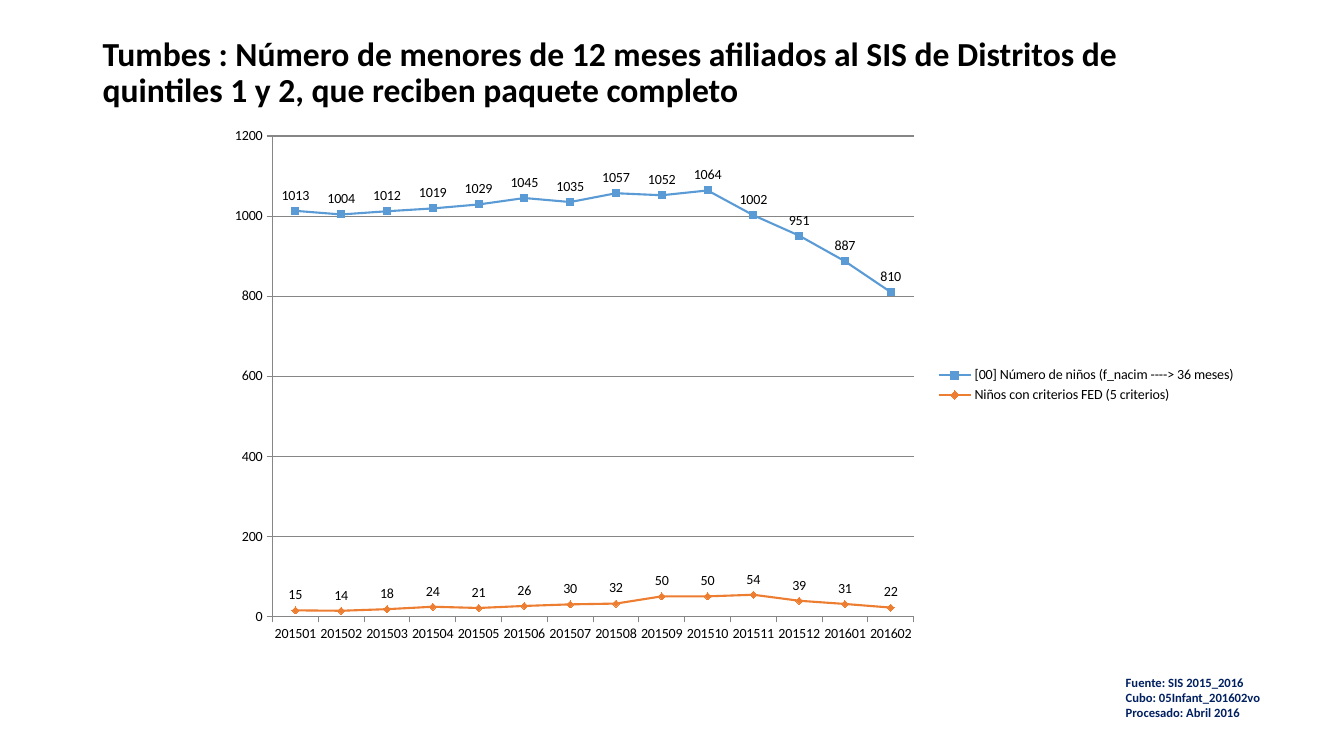
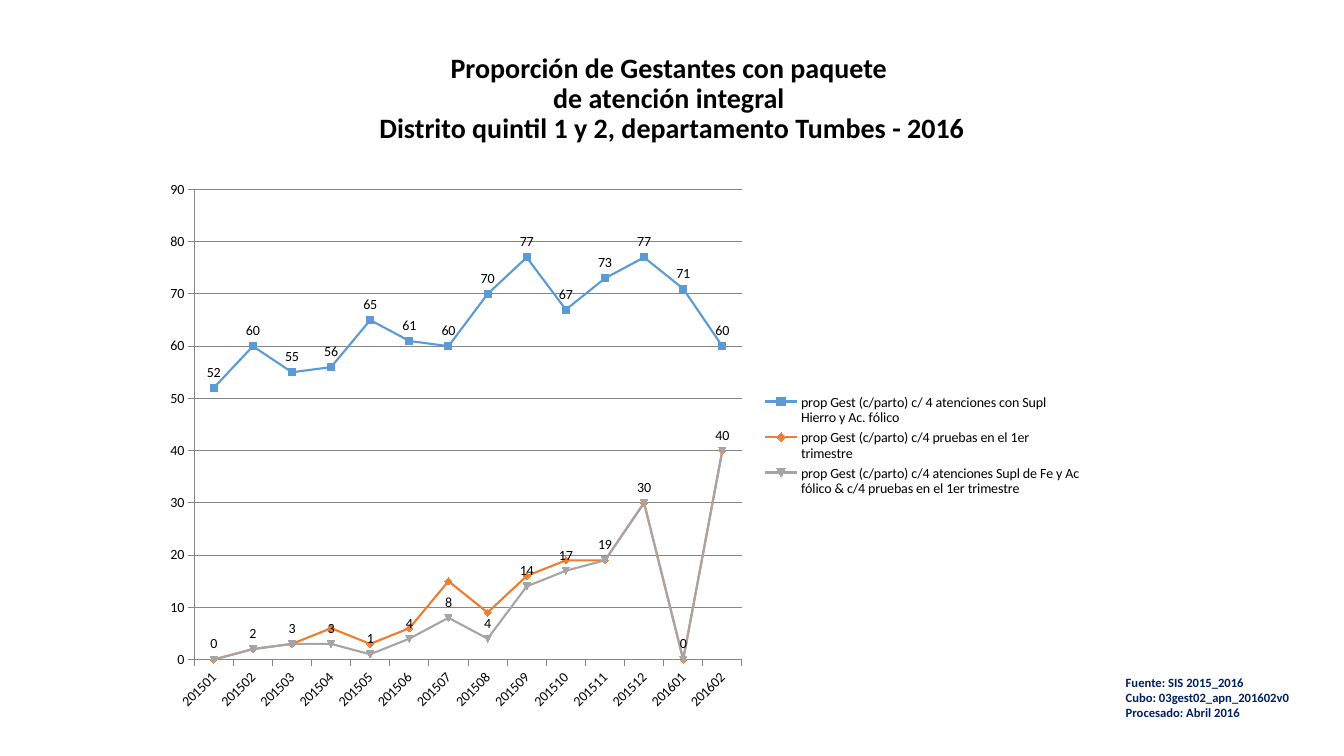
from pptx import Presentation
from pptx.chart.data import CategoryChartData
from pptx.dml.color import RGBColor
from pptx.enum.chart import (XL_CHART_TYPE, XL_LABEL_POSITION, XL_LEGEND_POSITION,
                             XL_MARKER_STYLE, XL_TICK_MARK)
from pptx.enum.text import MSO_ANCHOR, MSO_AUTO_SIZE, PP_ALIGN
from pptx.util import Cm, Pt

FONT = "Calibri"
COLORS = {"text": "000000", "source": "002060", "axis": "868686",
          "blue": "5B9BD5", "orange": "ED7D31", "gray": "A5A5A5"}
SERIES_COLORS = ["blue", "orange", "gray"]
MONTHS = ([f"2015{month:02}" for month in range(1, 13)]
          + [f"2016{month:02}" for month in range(1, 3)])


def color(name):
    return RGBColor.from_string(COLORS[name])


class Deck:
    def __init__(self):
        self.presentation = Presentation()
        self.presentation.slide_width = Cm(33.87)
        self.presentation.slide_height = Cm(19.05)
        self.slide = None

    def add_slide(self):
        self.slide = self.presentation.slides.add_slide(self.presentation.slide_layouts[5])

    def style_font(self, font, size, color_name="text", bold=False):
        font.name = FONT
        font.size = Pt(size)
        font.bold = bold
        font.color.rgb = color(color_name)

    def title(self, text, size, height, alignment=PP_ALIGN.LEFT):
        shape = self.slide.shapes.title
        shape.left, shape.top, shape.width, shape.height = Cm(2.33), Cm(1.01), Cm(29.21), height
        frame = shape.text_frame
        frame.text = text
        frame.word_wrap = True
        frame.auto_size = MSO_AUTO_SIZE.NONE
        frame.vertical_anchor = MSO_ANCHOR.MIDDLE
        paragraph = frame.paragraphs[0]
        paragraph.alignment = alignment
        paragraph.line_spacing = 0.9
        for run in paragraph.runs:
            self.style_font(run.font, size, bold=True)

    def source_note(self, cube):
        box = self.slide.shapes.add_textbox(Cm(28.12), Cm(16.88), Cm(5.75), Cm(2.16))
        frame = box.text_frame
        frame.word_wrap = True
        frame.text = f"Fuente: SIS 2015_2016\nCubo: {cube}\nProcesado: Abril 2016"
        for paragraph in frame.paragraphs:
            for run in paragraph.runs:
                self.style_font(run.font, 9, "source", bold=True)

    def line_chart(self, left, top, width, height, maximum, step, series_rows):
        """Each series row is (name, values, whether values are labelled)."""
        data = CategoryChartData(number_format="0")
        data.categories = MONTHS
        for name, values, _ in series_rows:
            data.add_series(name, values)
        chart = self.slide.shapes.add_chart(
            XL_CHART_TYPE.LINE_MARKERS, left, top, width, height, data).chart
        self.style_font(chart.font, 10)
        chart.has_title = False
        chart.has_legend = True
        chart.legend.position = XL_LEGEND_POSITION.RIGHT
        chart.legend.include_in_layout = False
        self.axes(chart, maximum, step)
        plot = chart.plots[0]
        plot.vary_by_categories = False
        for series, row, color_name in zip(plot.series, series_rows, SERIES_COLORS):
            self.series(series, color_name, labelled=row[2])

    def axes(self, chart, maximum, step):
        for axis in (chart.category_axis, chart.value_axis):
            axis.major_tick_mark = XL_TICK_MARK.OUTSIDE
            axis.minor_tick_mark = XL_TICK_MARK.NONE
            axis.format.line.color.rgb = color("axis")
            axis.format.line.width = Pt(0.75)
        value_axis = chart.value_axis
        value_axis.minimum_scale = 0
        value_axis.maximum_scale = maximum
        value_axis.major_unit = step
        value_axis.tick_labels.number_format = "0"
        value_axis.tick_labels.number_format_is_linked = False
        value_axis.has_major_gridlines = True
        gridline = value_axis.major_gridlines.format.line
        gridline.color.rgb = color("axis")
        gridline.width = Pt(0.75)

    def series(self, series, color_name, labelled):
        series.smooth = False
        series.format.line.color.rgb = color(color_name)
        series.format.line.width = Pt(1.5)
        marker = series.marker
        marker.style = XL_MARKER_STYLE.AUTOMATIC
        marker.size = 5
        marker.format.fill.solid()
        marker.format.fill.fore_color.rgb = color(color_name)
        marker.format.line.color.rgb = color(color_name)
        if labelled:
            labels = series.data_labels
            labels.show_value = True
            labels.position = XL_LABEL_POSITION.ABOVE
            labels.number_format = "0"
            labels.number_format_is_linked = False


def main():
    deck = Deck()

    deck.add_slide()
    deck.title("Tumbes : Número de menores de 12 meses afiliados al SIS de Distritos de "
               "quintiles 1 y 2, que reciben paquete completo", 24, Cm(1.68))
    deck.source_note("05Infant_201602vo")
    deck.line_chart(Cm(5.4), Cm(2.96), Cm(26.01), Cm(13.49), 1200, 200, [
        ("[00] Número de niños (f_nacim ----> 36 meses)",
         [1013, 1004, 1012, 1019, 1029, 1045, 1035, 1057, 1052, 1064, 1002, 951, 887, 810], True),
        ("Niños con criterios FED (5 criterios)",
         [15, 14, 18, 24, 21, 26, 30, 32, 50, 50, 54, 39, 31, 22], True),
    ])

    deck.add_slide()
    deck.title("Proporción de Gestantes con paquete \vde atención integral \v"
               "Distrito quintil 1 y 2, departamento Tumbes - 2016",
               20, Cm(3), PP_ALIGN.CENTER)
    deck.line_chart(Cm(3.82), Cm(4.3), Cm(23.7), Cm(13.87), 90, 10, [
        ("prop Gest (c/parto) c/ 4 atenciones con Supl Hierro y Ac. fólico",
         [52, 60, 55, 56, 65, 61, 60, 70, 77, 67, 73, 77, 71, 60], True),
        ("prop Gest (c/parto) c/4 pruebas en el 1er trimestre",
         [0, 2, 3, 6, 3, 6, 15, 9, 16, 19, 19, 30, 0, 40], False),
        ("prop Gest (c/parto) c/4 atenciones Supl de Fe y Ac fólico "
         "& c/4 pruebas en el 1er trimestre",
         [0, 2, 3, 3, 1, 4, 8, 4, 14, 17, 19, 30, 0, 40], True),
    ])
    deck.source_note("03gest02_apn_201602v0")

    deck.presentation.save("out.pptx")


if __name__ == "__main__":
    main()
